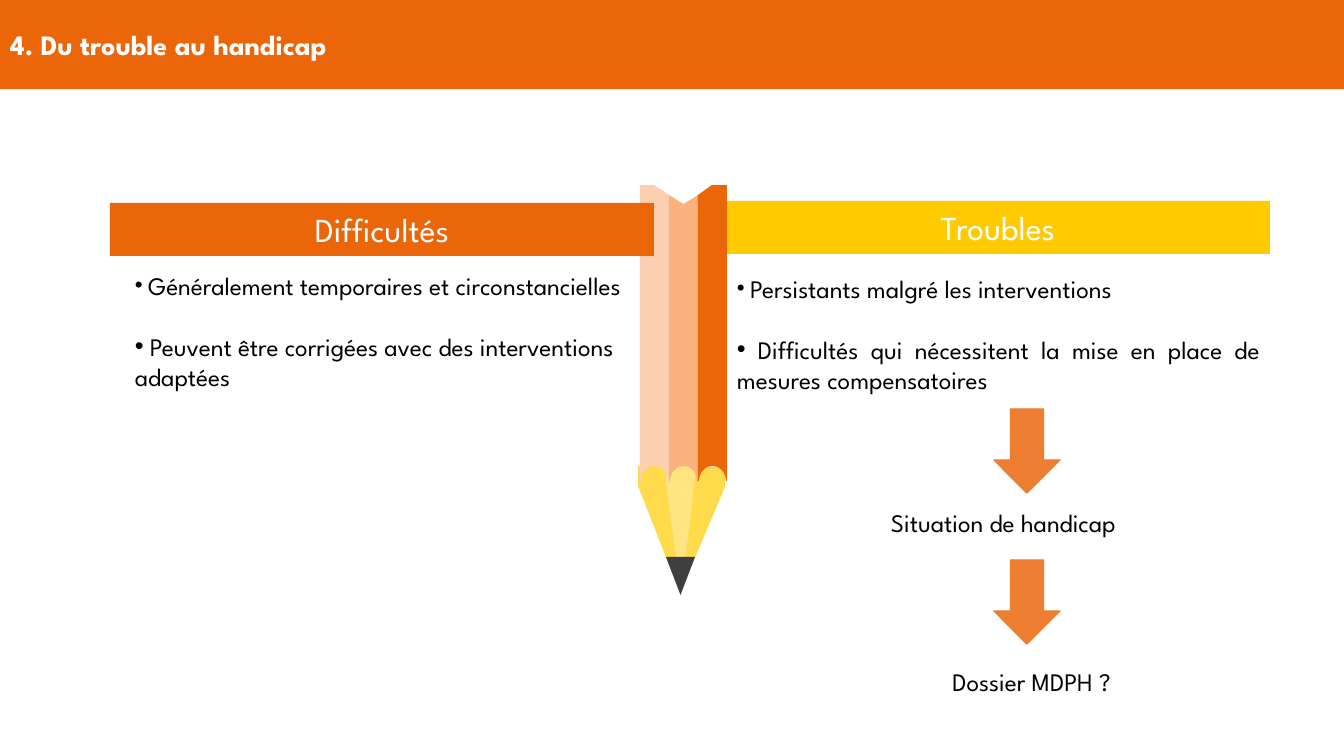
from dataclasses import dataclass
from math import cos, pi, sin

from lxml import etree
from pptx import Presentation
from pptx.dml.color import RGBColor
from pptx.enum.shapes import MSO_SHAPE as SHAPE
from pptx.enum.text import MSO_ANCHOR as ANCHOR, MSO_AUTO_SIZE as AUTO, PP_ALIGN as ALIGN
from pptx.oxml.ns import qn
from pptx.util import Emu, Pt

PX_PER_INCH = 100.8


def px(n):
    return Emu(round(n * 914400 / PX_PER_INCH))


@dataclass(frozen=True)
class Theme:
    font: str = "League Spartan"
    orange: str = "EB6608"
    yellow: str = "FFCB00"
    arrow: str = "ED7D31"
    peach: str = "FCCFB0"
    apricot: str = "FBB17B"
    wood: str = "FFDA4B"
    wood_light: str = "FFE47F"
    lead: str = "3F3F3F"
    white: str = "FFFFFF"
    black: str = "000000"
    heading: int = 24
    title: int = 20
    body: int = 18
    bullet: int = 16
    bullet_gap: int = 22


class Board:
    """The current slide and the style its elements share."""

    def __init__(self, slide, theme):
        self.slide = slide
        self.theme = theme

    def place(self, sp, box):
        sp.left, sp.top, sp.width, sp.height = map(px, box)

    def paint(self, sp, color):
        sp.shadow.inherit = False
        sp.fill.solid()
        sp.fill.fore_color.rgb = RGBColor.from_string(color)
        sp.line.fill.background()

    def run(self, p, text, size, color, bold=False):
        r = p.add_run()
        r.text = text
        r.font.name = self.theme.font
        r.font.size = Pt(size)
        r.font.bold = bold
        r.font.color.rgb = RGBColor.from_string(color)

    def title(self, text, box):
        sp = self.slide.shapes.title
        self.place(sp, box)
        sp.fill.solid()
        sp.fill.fore_color.rgb = RGBColor.from_string(self.theme.orange)
        tf = sp.text_frame
        tf.auto_size = AUTO.NONE
        tf.vertical_anchor = ANCHOR.MIDDLE
        p = tf.paragraphs[0]
        p.alignment = ALIGN.LEFT
        p.line_spacing = 1.0
        self.run(p, text, self.theme.title, self.theme.white, bold=True)

    def shape(self, kind, box, color, shapes=None):
        sp = (shapes or self.slide.shapes).add_shape(kind, *map(px, box))
        self.paint(sp, color)
        return sp

    def bar(self, text, box, color):
        tf = self.shape(SHAPE.RECTANGLE, box, color).text_frame
        tf.word_wrap = True
        tf.vertical_anchor = ANCHOR.MIDDLE
        p = tf.paragraphs[0]
        p.alignment = ALIGN.CENTER
        self.run(p, text, self.theme.heading, self.theme.white)

    def text_frame(self, box):
        tf = self.slide.shapes.add_textbox(*map(px, box)).text_frame
        tf.word_wrap = True
        return tf

    def label(self, text, box, align):
        p = self.text_frame(box).paragraphs[0]
        p.alignment = align
        self.run(p, text, self.theme.body, self.theme.black)

    def bullets(self, items, box, align):
        tf = self.text_frame(box)
        for i, item in enumerate(items):
            p = tf.add_paragraph() if i else tf.paragraphs[0]
            p.alignment = align
            if i:
                p.space_before = Pt(self.theme.bullet_gap)
            pPr = p._p.get_or_add_pPr()
            pPr.set("marL", "0")
            pPr.set("indent", "0")
            etree.SubElement(pPr, qn("a:buFont")).set("typeface", "Arial")
            etree.SubElement(pPr, qn("a:buChar")).set("char", "•")
            space_size = self.theme.body if i else self.theme.bullet
            self.run(p, " ", space_size, self.theme.black)
            self.run(p, item, self.theme.body, self.theme.black)

    def outline(self, shapes, points, color):
        start, *rest = [(px(x), px(y)) for x, y in points]
        builder = shapes.build_freeform(*start, scale=1.0)
        builder.add_line_segments(rest, close=True)
        self.paint(builder.convert_to_shape(), color)

    def pencil(self, left, top):
        t = self.theme
        shapes = self.slide.shapes.add_group_shape().shapes
        stripe, notch, shoulder, collar = 29, 10, 281, 296

        def at(points):
            return [(left + x, top + y) for x, y in points]

        self.outline(shapes, at([(-2, 281), (86, 282), (85, 302), (40, 408), (-2, 301)]), t.wood)
        self.outline(shapes, at([(26, 280), (55, 280), (55, 295), (41, 408), (26, 300)]), t.wood_light)
        tops = [
            (t.peach, [(0, 0), (14, 0), (29, notch)]),
            (t.apricot, [(0, notch), (14.5, 2 * notch - 1), (29, notch)]),
            (t.orange, [(0, notch), (14, 0), (29, 0)]),
        ]
        steps = 24
        scallop = [
            (stripe / 2 + 13.5 * cos(pi * k / steps), collar - (collar - shoulder) * sin(pi * k / steps))
            for k in range(steps + 1)
        ]
        for i, (color, edge) in enumerate(tops):
            points = edge + [(stripe, collar)] + scallop + [(0, collar)]
            self.outline(shapes, at([(x + i * stripe, y) for x, y in points]), color)
        tip = self.shape(SHAPE.ISOSCELES_TRIANGLE, (left + 26, top + 372, 29, 38), t.lead, shapes)
        tip.rotation = 180

    def down_arrow(self, box):
        sp = self.shape(SHAPE.DOWN_ARROW, box, self.theme.arrow)
        sp.line.color.rgb = RGBColor.from_string(self.theme.arrow)
        sp.line.width = Pt(1)


def main():
    prs = Presentation()
    prs.slide_width, prs.slide_height = px(1344), px(756)
    theme = Theme()
    board = Board(prs.slides.add_slide(prs.slide_layouts[5]), theme)

    board.title("4. Du trouble au handicap", (0, 0, 1344, 89))
    board.bar("Troubles", (726, 201, 544, 53), theme.yellow)
    board.pencil(640, 185)
    board.bar("Difficultés", (110, 203, 544, 53), theme.orange)

    board.bullets(
        ["Généralement temporaires et circonstancielles",
         "Peuvent être corrigées avec des interventions adaptées"],
        (125, 265, 512, 190), ALIGN.LEFT)
    board.bullets(
        ["Persistants malgré les interventions",
         "Difficultés qui nécessitent la mise en place de mesures compensatoires"],
        (727, 268, 543, 132), ALIGN.JUSTIFY)

    for top in (409, 560):
        board.down_arrow((994, top, 66, 84))
    board.label("Situation de handicap", (881, 502, 301, 40), ALIGN.LEFT)
    board.label("Dossier MDPH ?", (881, 661, 301, 40), ALIGN.CENTER)

    prs.save("out.pptx")


if __name__ == "__main__":
    main()
